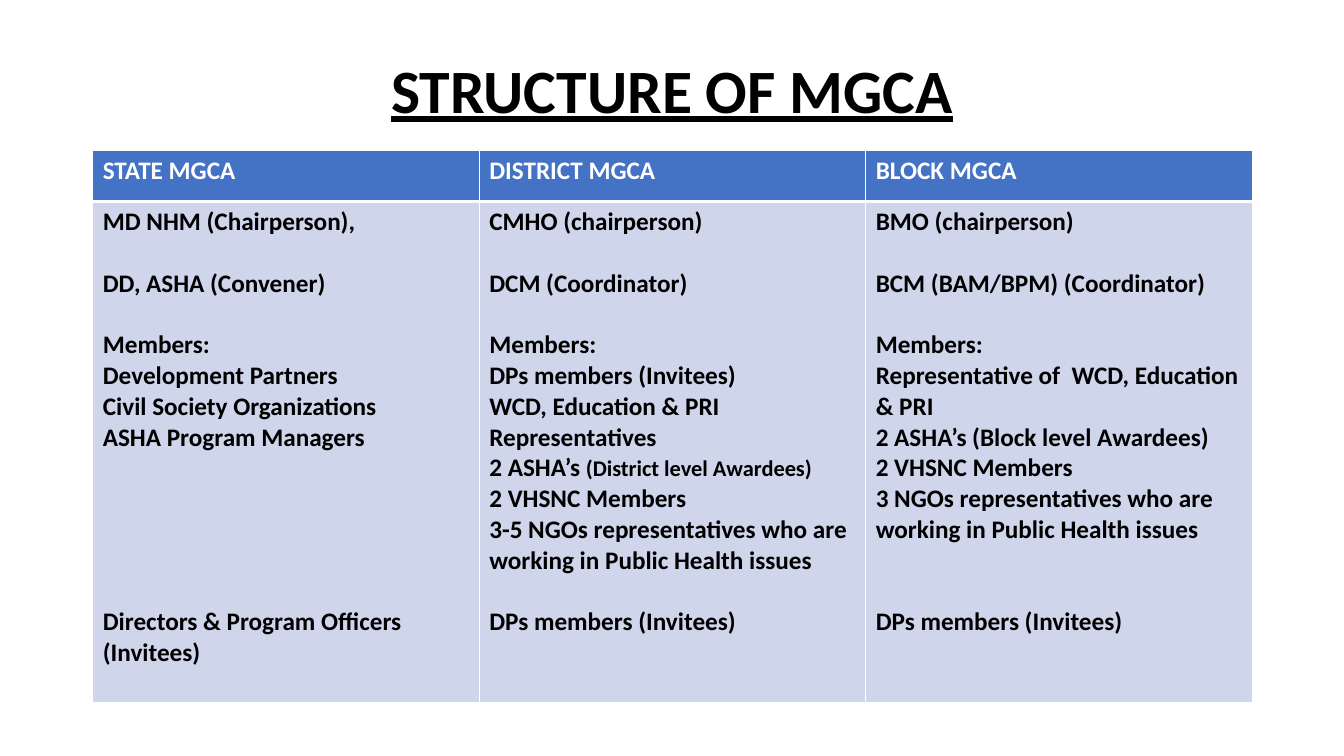
import pptx
import pptx.util
import pptx.dml.color
import pptx.enum.text
import pptx.oxml
import pptx.oxml.ns

Inches = pptx.util.Inches
Pt = pptx.util.Pt
RGBColor = pptx.dml.color.RGBColor

BLACK = RGBColor(0x00, 0x00, 0x00)
WHITE = RGBColor(0xFF, 0xFF, 0xFF)
BLUE = RGBColor(0x44, 0x72, 0xC4)
PALE = RGBColor(0xCF, 0xD5, 0xEA)

LEFT = 0.92
WIDTH = 11.5
LINE = 22

HEADS = ["STATE MGCA", "DISTRICT MGCA", "BLOCK MGCA"]
BODIES = [
    [
        (0, ["MD NHM (Chairperson),"]),
        (1, ["DD, ASHA (Convener)"]),
        (1, ["Members:"]),
        (0, ["Development Partners"]),
        (0, ["Civil Society Organizations"]),
        (0, ["ASHA Program Managers"]),
        (5, ["Directors & Program Officers"]),
        (0, ["(Invitees)"]),
    ],
    [
        (0, ["CMHO (chairperson)"]),
        (1, ["DCM (Coordinator)"]),
        (1, ["Members:"]),
        (0, ["DPs members (Invitees)"]),
        (0, ["WCD, Education & PRI Representatives"]),
        (0, ["2 ASHA’s ", "(District level Awardees)"]),
        (0, ["2 VHSNC Members"]),
        (0, ["3-5 NGOs representatives who are working in Public Health issues"]),
        (1, ["DPs members (Invitees)"]),
    ],
    [
        (0, ["BMO (chairperson)"]),
        (1, ["BCM (BAM/BPM) (Coordinator)"]),
        (1, ["Members:"]),
        (0, ["Representative of  WCD, Education & PRI"]),
        (0, ["2 ASHA’s (Block level Awardees)"]),
        (0, ["2 VHSNC Members"]),
        (0, ["3 NGOs representatives who are working in Public Health issues"]),
        (2, ["DPs members (Invitees)"]),
    ],
]


class Deck:
    font = "Calibri"
    size = 18
    small = 16

    def __init__(self):
        self.prs = pptx.Presentation()
        self.prs.slide_width = Inches(13.33)
        self.prs.slide_height = Inches(7.5)
        self.slide = self.prs.slides.add_slide(self.prs.slide_layouts[6])

    def style(self, run, size, color):
        run.font.name = self.font
        run.font.size = Pt(size)
        run.font.bold = True
        run.font.color.rgb = color

    def title(self, text, left, top, width, height):
        box = self.slide.shapes.add_textbox(
            Inches(left), Inches(top), Inches(width), Inches(height))
        frame = box.text_frame
        frame.word_wrap = True
        frame.vertical_anchor = pptx.enum.text.MSO_ANCHOR.MIDDLE
        frame.text = text
        para = frame.paragraphs[0]
        para.alignment = pptx.enum.text.PP_ALIGN.CENTER
        para.line_spacing = 0.9
        self.style(para.runs[0], 44, BLACK)
        para.runs[0].font.underline = True

    def edges(self, cell, widths):
        props = cell._tc.get_or_add_tcPr()
        for index, (side, width) in enumerate(zip("LRTB", widths)):
            line = pptx.oxml.parse_xml(
                f'<a:ln{side} {pptx.oxml.ns.nsdecls("a")} w="{Pt(width)}">'
                f'<a:solidFill><a:srgbClr val="{WHITE}"/></a:solidFill>'
                f'</a:ln{side}>')
            props.insert(index, line)

    def cell(self, cell, lines, color, fill, widths):
        cell.fill.solid()
        cell.fill.fore_color.rgb = fill
        self.edges(cell, widths)
        frame = cell.text_frame
        for index, (gap, parts) in enumerate(lines):
            para = frame.add_paragraph() if index else frame.paragraphs[0]
            para.text = parts[0]
            para.space_before = Pt(gap * LINE)
            self.style(para.runs[0], self.size, color)
            for part in parts[1:]:
                run = para.add_run()
                run.text = part
                self.style(run, self.small, color)

    def table(self, heads, bodies, left, top, width, heights):
        table = self.slide.shapes.add_table(
            len(heights), len(heads), Inches(left), Inches(top),
            Inches(width), Inches(sum(heights))).table
        for row, height in zip(table.rows, heights):
            row.height = Inches(height)
        for col, (head, body) in enumerate(zip(heads, bodies)):
            table.columns[col].width = Inches(width / len(heads))
            self.cell(table.cell(0, col), [(0, [head])], WHITE, BLUE, (1, 1, 1, 3))
            self.cell(table.cell(1, col), body, BLACK, PALE, (1, 1, 3, 1))


def main():
    deck = Deck()
    deck.title("STRUCTURE OF MGCA", LEFT, 0, WIDTH, 1.85)
    deck.table(HEADS, BODIES, LEFT, 1.49, WIDTH, [0.51, 4.97])
    deck.prs.save("out.pptx")


if __name__ == "__main__":
    main()
